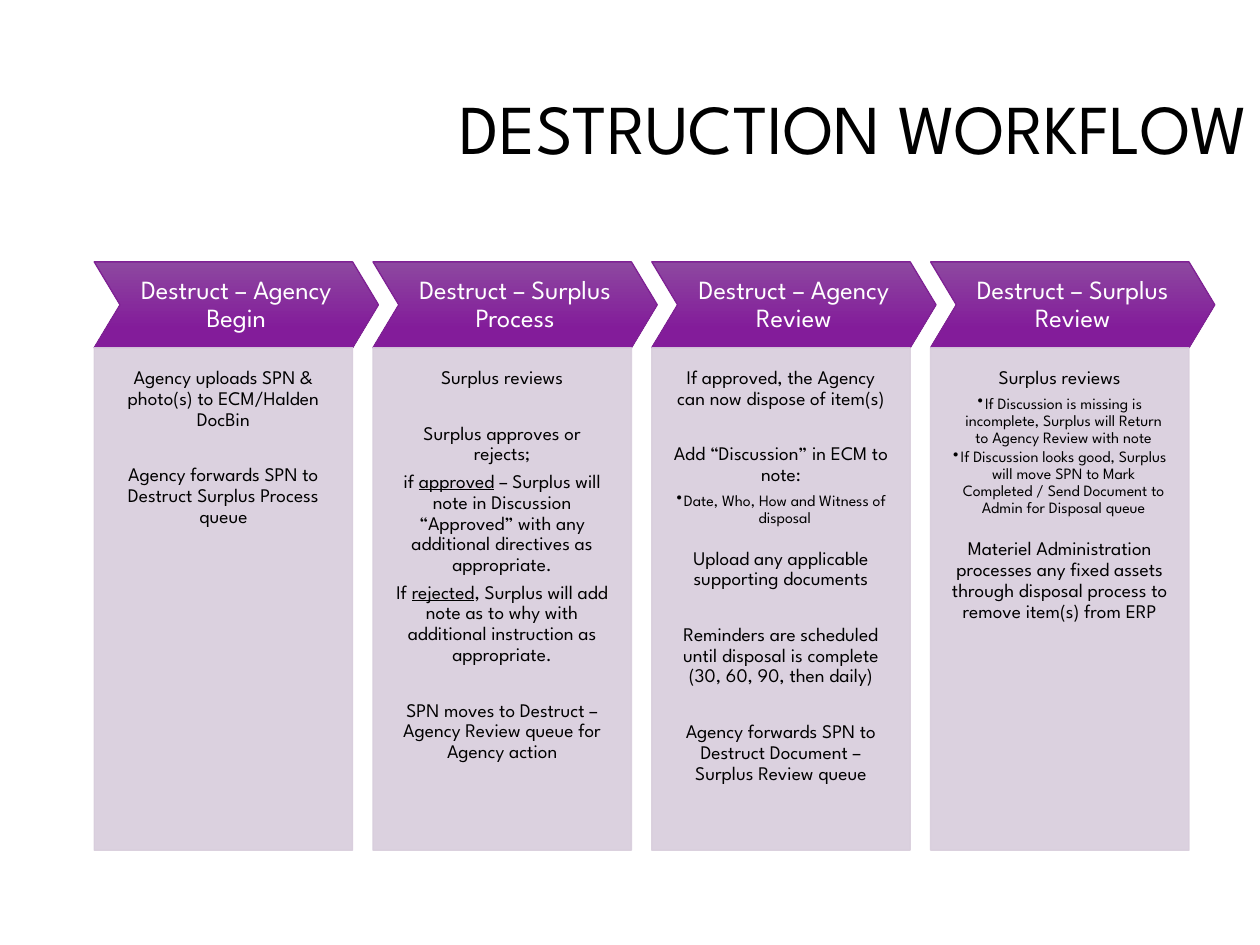
from dataclasses import dataclass

from lxml.etree import SubElement
from pptx import Presentation
from pptx.dml.color import RGBColor
from pptx.enum.shapes import MSO_SHAPE
from pptx.enum.text import MSO_ANCHOR, MSO_AUTO_SIZE, PP_ALIGN
from pptx.oxml.ns import qn
from pptx.util import Cm, Pt

FONT = "League Spartan"
BLACK = RGBColor(0x00, 0x00, 0x00)
WHITE = RGBColor(0xFF, 0xFF, 0xFF)
PURPLE_LIGHT = RGBColor(0x8D, 0x48, 0xA0)
PURPLE_DARK = RGBColor(0x83, 0x1C, 0x9A)
PURPLE_EDGE = RGBColor(0x7F, 0x22, 0x94)
LILAC = RGBColor(0xD8, 0xCD, 0xDC)

# Column grid, in centimetres
LEFT, TOP, PITCH = 1.9, 5.28, 5.62
COLUMN_W, HEADER_H, PANEL_H, TIP = 5.21, 1.73, 10.13, 0.52

WIDE_GAP, GAP = 16, 11  # points before a new step


@dataclass
class Step:
    text: str  # underscores enclose underlined words
    before: float = 0
    bullet: bool = False


STAGES = [
    ("Destruct – Agency Begin", [
        Step("Agency uploads SPN & photo(s) to ECM/Halden DocBin"),
        Step("Agency forwards SPN to Destruct Surplus Process queue", WIDE_GAP),
    ]),
    ("Destruct – Surplus Process", [
        Step("Surplus reviews"),
        Step("Surplus approves or rejects;", WIDE_GAP),
        Step("if _approved_ – Surplus will note in Discussion “Approved” "
             "with any additional directives as appropriate."),
        Step("If _rejected_, Surplus will add note as to why with "
             "additional instruction as appropriate."),
        Step("SPN moves to Destruct – Agency Review queue for Agency action",
             WIDE_GAP),
    ]),
    ("Destruct – Agency Review", [
        Step("If approved, the Agency can now dispose of item(s)"),
        Step("Add “Discussion” in ECM to note:", WIDE_GAP),
        Step("Date, Who, How and Witness of disposal", bullet=True),
        Step("Upload any applicable supporting documents", GAP),
        Step("Reminders are scheduled until disposal is complete "
             "(30, 60, 90, then daily)", WIDE_GAP),
        Step("Agency forwards SPN to Destruct Document – Surplus Review queue",
             WIDE_GAP),
    ]),
    ("Destruct – Surplus Review", [
        Step("Surplus reviews"),
        Step("If Discussion is missing is incomplete, Surplus will Return "
             "to Agency Review with note", bullet=True),
        Step("If Discussion looks good, Surplus will move SPN to Mark Completed "
             "/ Send Document to Admin for Disposal queue", bullet=True),
        Step("Materiel Administration processes any fixed assets through "
             "disposal process to remove item(s) from ERP", GAP),
    ]),
]


def style_paragraph(paragraph, size, color, after, align=PP_ALIGN.CENTER):
    paragraph.alignment = align
    paragraph.line_spacing = 0.9
    paragraph.space_before = Pt(0)
    paragraph.space_after = Pt(after)
    for run in paragraph.runs:
        run.font.name = FONT
        run.font.size = Pt(size)
        run.font.color.rgb = color


def set_frame(frame, anchor, side, top, bottom):
    frame.word_wrap = True
    frame.auto_size = MSO_AUTO_SIZE.NONE
    frame.vertical_anchor = anchor
    frame.margin_left = frame.margin_right = Cm(side)
    frame.margin_top, frame.margin_bottom = Cm(top), Cm(bottom)


def set_line(shape, color):
    shape.shadow.inherit = False
    shape.line.color.rgb = color
    shape.line.width = Pt(0.75)


def add_bullet(paragraph):
    paragraph.level = 1
    props = paragraph._p.get_or_add_pPr()
    props.set("marL", str(Cm(0.15)))
    props.set("indent", str(Cm(-0.15)))
    SubElement(props, qn("a:buChar")).set("char", "•")


def add_title(slide):
    title = slide.shapes.title
    title.left, title.top = Cm(7.47), Cm(0.86)
    title.width, title.height = Cm(17.93), Cm(3.58)
    frame = title.text_frame
    frame.text = "DESTRUCTION WORKFLOW"
    set_frame(frame, MSO_ANCHOR.MIDDLE, 0.25, 0.13, 0.13)
    style_paragraph(frame.paragraphs[0], 40, BLACK, 6, PP_ALIGN.RIGHT)


def add_header(slide, left, heading):
    right, middle, bottom = left + COLUMN_W, TOP + HEADER_H / 2, TOP + HEADER_H
    outline = [(right, TOP), (right + TIP, middle), (right, bottom),
               (left, bottom), (left + TIP, middle)]
    builder = slide.shapes.build_freeform(Cm(left), Cm(TOP))
    builder.add_line_segments([(Cm(x), Cm(y)) for x, y in outline])
    chevron = builder.convert_to_shape()
    set_line(chevron, PURPLE_EDGE)
    chevron.fill.gradient()
    chevron.fill.gradient_angle = 270
    shades = [(0, PURPLE_LIGHT), (0.78, PURPLE_DARK)]
    for stop, (position, color) in zip(chevron.fill.gradient_stops, shades):
        stop.position = position
        stop.color.rgb = color
    frame = chevron.text_frame
    frame.text = heading
    set_frame(frame, MSO_ANCHOR.MIDDLE, 0.74, 0.2, 0.2)
    style_paragraph(frame.paragraphs[0], 15, WHITE, 0)


def write_step(paragraph, step):
    for index, part in enumerate(step.text.split("_")):
        run = paragraph.add_run()
        run.text = part
        if index % 2:
            run.font.underline = True
    if step.bullet:
        add_bullet(paragraph)
    size, after = (9, 1.35) if step.bullet else (11, 3.85)
    style_paragraph(paragraph, size, BLACK, after)
    paragraph.space_before = Pt(step.before)


def add_panel(slide, left, steps):
    panel = slide.shapes.add_shape(
        MSO_SHAPE.RECTANGLE, Cm(left), Cm(TOP + HEADER_H),
        Cm(COLUMN_W), Cm(PANEL_H))
    panel.fill.solid()
    panel.fill.fore_color.rgb = LILAC
    set_line(panel, LILAC)
    # Slight transparency on fill and line
    for color in panel._element.spPr.iter(qn("a:srgbClr")):
        SubElement(color, qn("a:alpha")).set("val", "90000")
    frame = panel.text_frame
    set_frame(frame, MSO_ANCHOR.TOP, 0.41, 0.41, 0.81)
    for index, step in enumerate(steps):
        write_step(frame.add_paragraph() if index else frame.paragraphs[0], step)


def main():
    deck = Presentation()
    deck.slide_width, deck.slide_height = Cm(25.4), Cm(19.05)
    slide = deck.slides.add_slide(deck.slide_layouts[5])
    add_title(slide)
    # One column for each stage of the workflow
    for column, (heading, steps) in enumerate(STAGES):
        left = LEFT + column * PITCH
        add_header(slide, left, heading)
        add_panel(slide, left, steps)
    deck.save("out.pptx")


if __name__ == "__main__":
    main()
